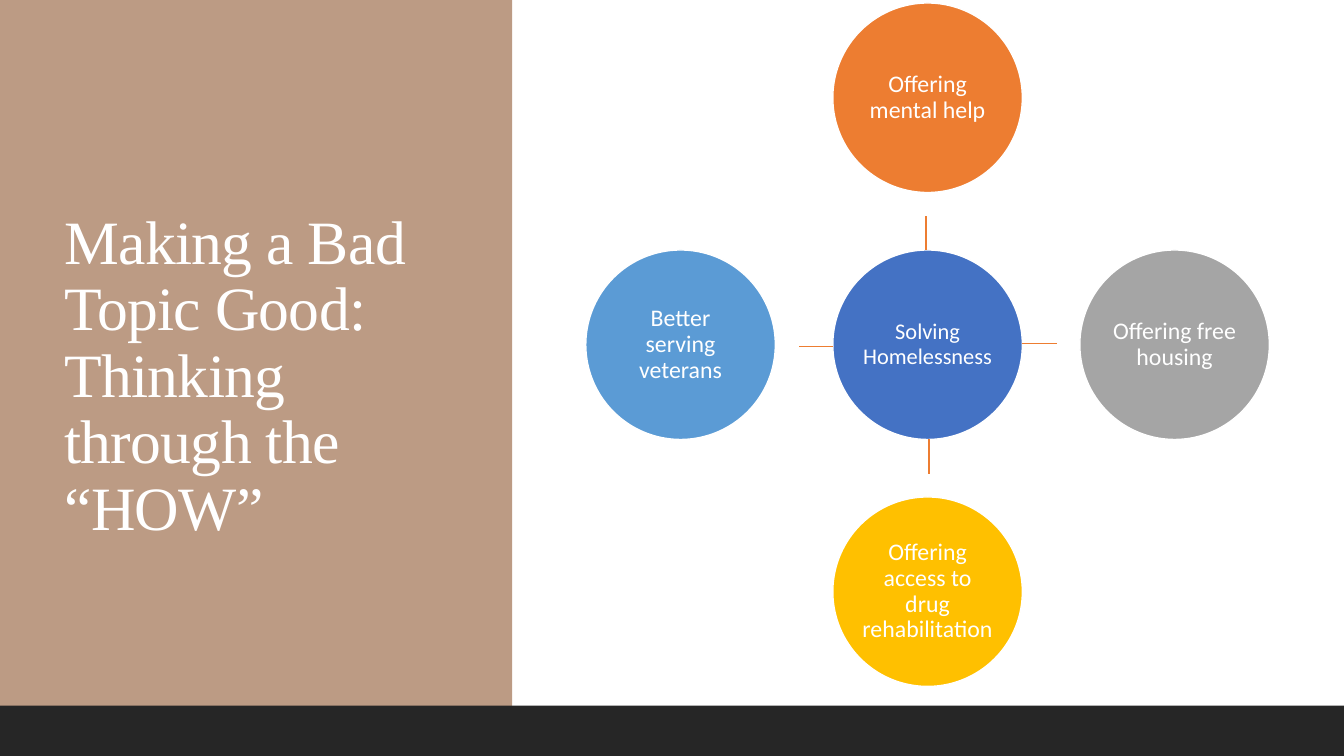
from pptx import Presentation
from pptx.dml.color import RGBColor
from pptx.enum.shapes import MSO_CONNECTOR, MSO_SHAPE
from pptx.enum.text import MSO_ANCHOR, PP_ALIGN
from pptx.oxml.ns import qn
from pptx.util import Inches, Pt

RECT, OVAL = MSO_SHAPE.RECTANGLE, MSO_SHAPE.OVAL
STRAIGHT = MSO_CONNECTOR.STRAIGHT
MIDDLE = MSO_ANCHOR.MIDDLE
LEFT, CENTER = PP_ALIGN.LEFT, PP_ALIGN.CENTER

COLORS = {
    "white": "FFFFFF", "tan": "BC9B84", "dark": "262626", "blue": "4472C4",
    "orange": "ED7D31", "gray": "A5A5A5", "gold": "FFC000", "sky": "5B9BD5",
}
HUB_X, HUB_Y = 9.2, 3.42
DIAMETER = 1.88
PITCH = 2.45
SPOKE_LENGTH = 0.34
SPOKE_SHIFT = 0.015
IDEAS = [
    ("Offering mental help", "orange", 0, -1),
    ("Offering free housing", "gray", 1, 0),
    ("Offering access to drug rehabilitation", "gold", 0, 1),
    ("Better serving veterans", "sky", -1, 0),
]


def rgb(name):
    return RGBColor.from_string(COLORS[name])


def add_filled(slide, kind, x, y, w, h, color):
    sp = slide.shapes.add_shape(kind, Inches(x), Inches(y), Inches(w), Inches(h))
    sp.shadow.inherit = False
    sp.fill.solid()
    sp.fill.fore_color.rgb = rgb(color)
    sp.line.fill.background()
    return sp


def write_text(sp, text, font, size, align):
    tf = sp.text_frame
    tf.word_wrap = True
    tf.vertical_anchor = MIDDLE
    p = tf.paragraphs[0]
    p.alignment = align
    p.line_spacing = 0.9
    r = p.add_run()
    r.text = text
    r.font.name = font
    r.font.size = Pt(size)
    r.font.color.rgb = rgb("white")
    return r


def add_title(slide, text):
    sp = slide.shapes.add_textbox(Inches(0.54), Inches(0.66), Inches(3.98), Inches(6.17))
    r = write_text(sp, text, "Times New Roman", 44, LEFT)
    r.font._element.set("spc", "-50")


def add_circle(slide, text, color, cx, cy, size):
    radius = DIAMETER / 2
    sp = add_filled(slide, OVAL, cx - radius, cy - radius, DIAMETER, DIAMETER, color)
    sp.line.color.rgb = rgb("white")
    sp.line.width = Pt(1)
    tf = sp.text_frame
    tf.margin_left = tf.margin_right = tf.margin_top = tf.margin_bottom = Inches(0.01)
    write_text(sp, text, "Calibri", size, CENTER)


def add_spoke(slide, dx, dy):
    x = HUB_X + dy * SPOKE_SHIFT
    y = HUB_Y - dx * SPOKE_SHIFT
    start = DIAMETER / 2
    end = start + SPOKE_LENGTH
    line = slide.shapes.add_connector(
        STRAIGHT, Inches(x + dx * start), Inches(y + dy * start),
        Inches(x + dx * end), Inches(y + dy * end))
    line.line.color.rgb = rgb("orange")
    line.line.width = Pt(1)
    spPr = line._element.spPr
    spPr.append(spPr.makeelement(qn("a:effectLst"), {}))


def main():
    prs = Presentation()
    prs.slide_width, prs.slide_height = Inches(13.33), Inches(7.5)
    s = prs.slides.add_slide(prs.slide_layouts[6])
    add_filled(s, RECT, 0, 0, 13.33, 7.5, "white")
    add_filled(s, RECT, 0, 0, 5.08, 7.5, "tan")
    add_title(s, "Making a Bad Topic Good: Thinking through the “HOW”")
    add_filled(s, RECT, 0, 7, 13.33, 0.5, "dark")
    add_circle(s, "Solving Homelessness", "blue", HUB_X, HUB_Y, 16)
    for text, color, dx, dy in IDEAS:
        add_spoke(s, dx, dy)
        add_circle(s, text, color, HUB_X + dx * PITCH, HUB_Y + dy * PITCH, 17)
    prs.save("out.pptx")


if __name__ == "__main__":
    main()
